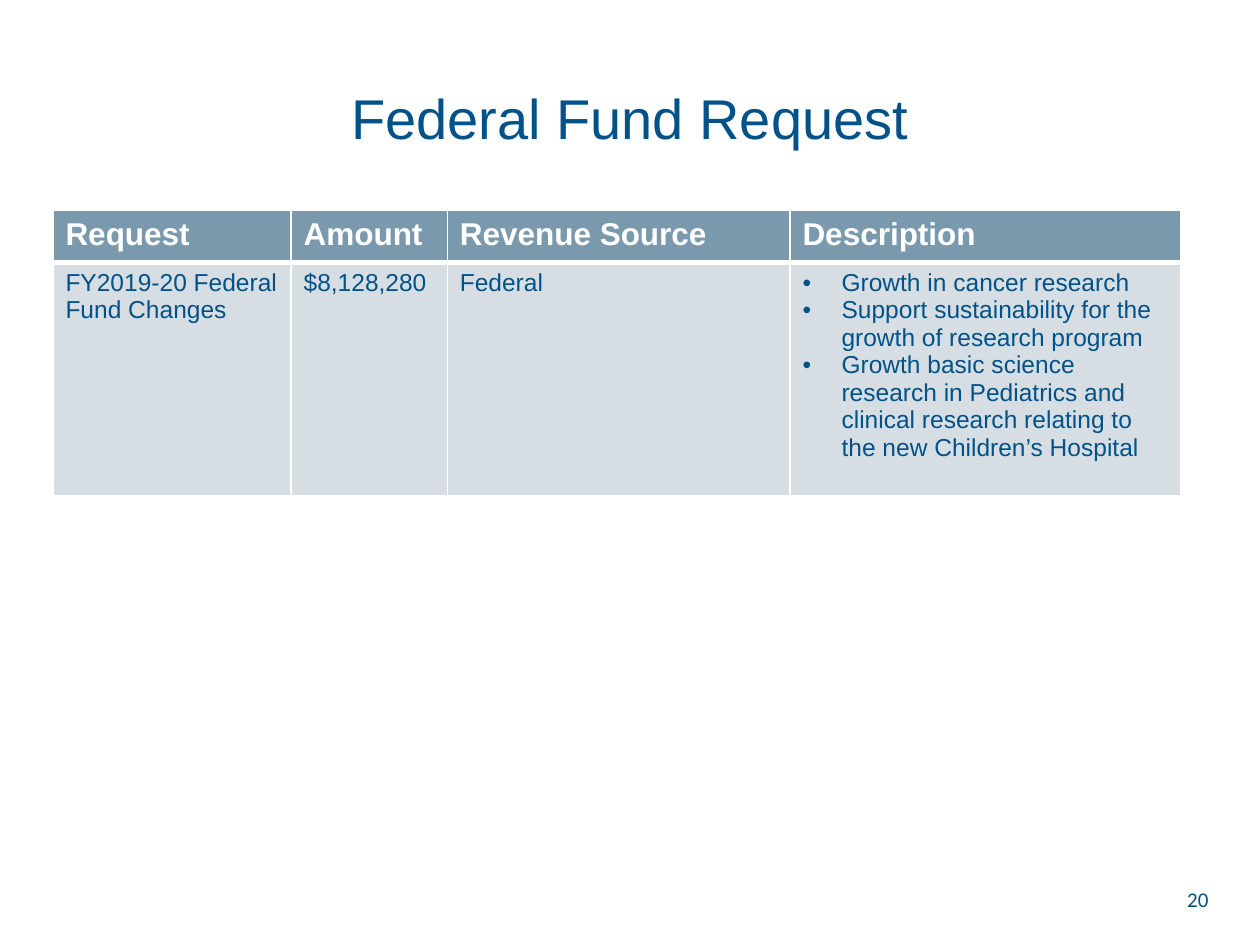
from lxml.etree import SubElement
from pptx import Presentation
from pptx.dml.color import RGBColor
from pptx.enum.text import MSO_ANCHOR, PP_ALIGN
from pptx.oxml import parse_xml
from pptx.oxml.ns import nsdecls, qn
from pptx.util import Inches, Pt

COLORS = {"ink": "005288", "header": "7A99AC", "body": "D7DEE3", "white": "FFFFFF"}
COLUMN_WIDTHS = [0.189, 0.124, 0.272, 0.31]
ROW_HEIGHTS = [0.055, 0.247]
HEADINGS = ["Request", "Amount", "Revenue Source", "Description"]
DETAILS = [
    ["FY2019-20 Federal Fund Changes"],
    ["$8,128,280"],
    ["Federal"],
    [
        "Growth in cancer research",
        "Support sustainability for the growth of research program",
        "Growth basic science research in Pediatrics and clinical research "
        "relating to the new Children’s Hospital",
    ],
]


def write(para, text, size, color="ink", font="Arial", bold=False,
          align=PP_ALIGN.LEFT, bullet=False):
    if bullet:
        properties = para._p.get_or_add_pPr()
        properties.set("marL", str(Inches(0.31)))
        properties.set("indent", str(Inches(-0.31)))
        SubElement(properties, qn("a:buFont"), typeface="Arial")
        SubElement(properties, qn("a:buChar"), char="•")
    para.alignment = align
    span = para.add_run()
    span.text = text
    span.font.name = font
    span.font.size = Pt(size)
    span.font.bold = bold
    span.font.color.rgb = RGBColor.from_string(COLORS[color])


class Page:
    """A slide whose lengths are given as shares of its width and height."""

    def __init__(self, deck):
        self.width, self.height = deck.slide_width, deck.slide_height
        self.slide = deck.slides.add_slide(deck.slide_layouts[6])

    def across(self, share):
        return round(self.width * share)

    def down(self, share):
        return round(self.height * share)

    def place(self, left, top, width, height):
        return (self.across(left), self.down(top),
                self.across(width), self.down(height))

    def text(self, text, *area, anchor=MSO_ANCHOR.TOP, **style):
        box = self.slide.shapes.add_textbox(*self.place(*area))
        box.text_frame.word_wrap = True
        box.text_frame.vertical_anchor = anchor
        write(box.text_frame.paragraphs[0], text, **style)

    def table(self, left, top, widths, heights):
        area = self.place(left, top, sum(widths), sum(heights))
        table = self.slide.shapes.add_table(len(heights), len(widths), *area).table
        for column, width in zip(table.columns, widths):
            column.width = self.across(width)
        for row, height in zip(table.rows, heights):
            row.height = self.down(height)
        return table

    def cell(self, cell, lines, fill, edges, **style):
        """Fill a cell; edges maps each side (L, R, T, B) to points."""
        cell.fill.solid()
        cell.fill.fore_color.rgb = RGBColor.from_string(COLORS[fill])
        properties = cell._tc.get_or_add_tcPr()
        for position, side in enumerate("LRTB"):
            properties.insert(position, parse_xml(
                f'<a:ln{side} {nsdecls("a")} w="{Pt(edges[side])}"><a:solidFill>'
                f'<a:srgbClr val="{COLORS["white"]}"/></a:solidFill></a:ln{side}>'))
        frame = cell.text_frame
        for index, line in enumerate(lines):
            para = frame.add_paragraph() if index else frame.paragraphs[0]
            write(para, line, bullet=len(lines) > 1, **style)


def main():
    deck = Presentation()
    deck.slide_width, deck.slide_height = Inches(10), Inches(7.5)
    page = Page(deck)
    page.text("Federal Fund Request", 0.05, 0.04, 0.9, 0.167, size=32,
              anchor=MSO_ANCHOR.MIDDLE, align=PP_ALIGN.CENTER)
    page.text("20", 0.736, 0.932, 0.233, 0.053, size=12, font="Calibri",
              align=PP_ALIGN.RIGHT)

    table = page.table(0.042, 0.223, COLUMN_WIDTHS, ROW_HEIGHTS)
    thin = dict.fromkeys("LRTB", 1)
    for column, (heading, lines) in enumerate(zip(HEADINGS, DETAILS)):
        page.cell(table.cell(0, column), [heading], "header", {**thin, "B": 3},
                  size=18, color="white", bold=True)
        page.cell(table.cell(1, column), lines, "body", {**thin, "T": 3}, size=14)
    deck.save("out.pptx")


if __name__ == "__main__":
    main()
